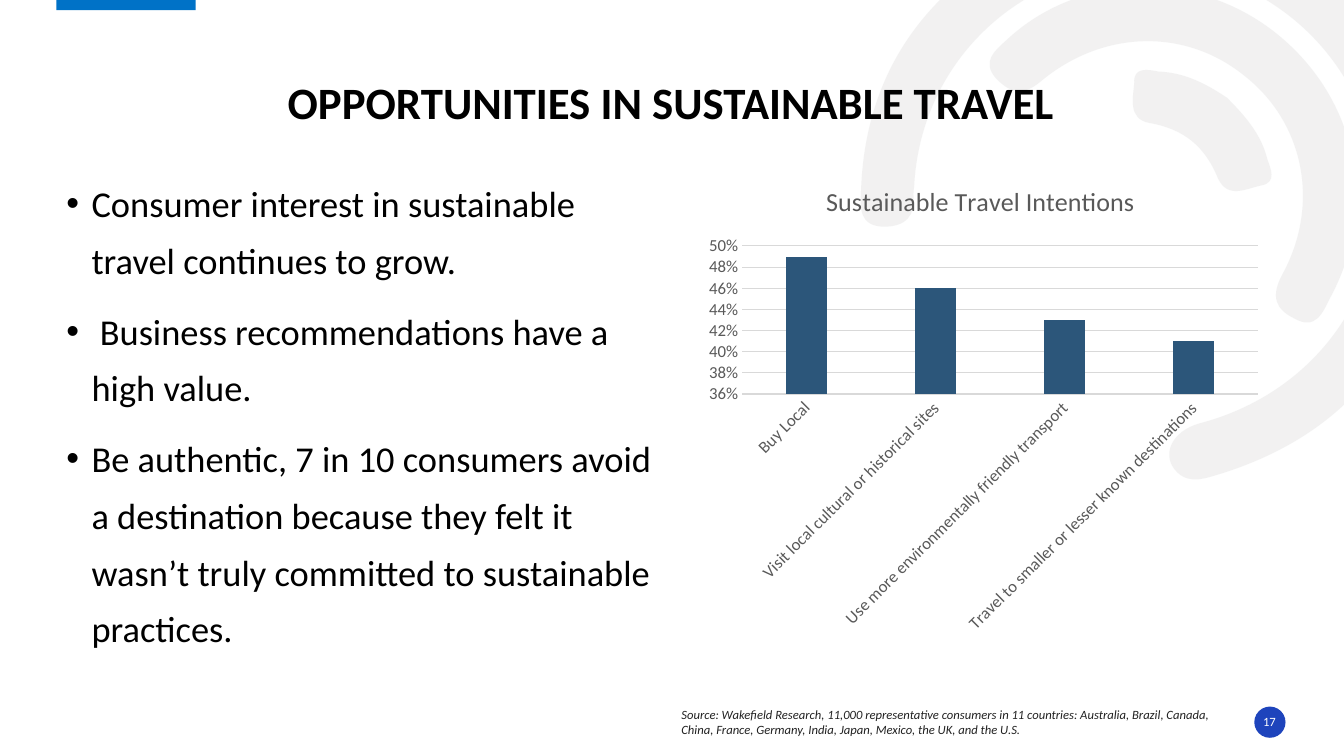
from lxml import etree
from pptx import Presentation, util as u
from pptx.chart.data import CategoryChartData
from pptx.dml.color import RGBColor
from pptx.enum import chart as ch, shapes, text
from pptx.oxml import parse_xml
from pptx.oxml.ns import nsdecls, qn

FONT = "Calibri"


def rgb(code):
    return RGBColor.from_string(code)


def style(font, size, color):
    font.name, font.size = FONT, u.Pt(size)
    font.color.rgb = rgb(color)


deck = Presentation()
deck.slide_width, deck.slide_height = u.Inches(13.33), u.Inches(7.5)
slide = deck.slides.add_slide(deck.slide_layouts[6])
items = slide.shapes

# Background arcs: a start point, then Bezier curves of three points each
arcs = [
    [(13.28, -0.14),
     (13.99, 0.51), (14.36, 1.42), (14.14, 2.53), (13.9, 3.65), (13.19, 4.36), (12.11, 4.7),
     (11.97, 4.74), (11.81, 4.81), (11.68, 4.69), (11.51, 4.53), (11.61, 4.28), (11.9, 4.2),
     (13.16, 3.87), (13.9, 2.68), (13.61, 1.44), (13.35, 0.34), (12.32, -0.41), (11.2, -0.33),
     (10.05, -0.25), (9.15, 0.65), (9.07, 1.8), (9.07, 1.84), (9.06, 1.89), (9.06, 1.93),
     (9.08, 2.14), (8.99, 2.25), (8.76, 2.25), (8.52, 2.24), (8.53, 2.06), (8.54, 1.9),
     (8.57, 0.97), (8.95, 0.22), (9.71, -0.33), (10.75, -1.09), (12.16, -1.04), (13.28, -0.14)],
    [(12.67, 0.34),
     (13.47, 0.99), (13.68, 2.06), (13.19, 2.96), (13.12, 3.1), (13.05, 3.28), (12.84, 3.16),
     (12.65, 3.07), (12.6, 2.94), (12.72, 2.72), (13.1, 2.02), (12.93, 1.21), (12.34, 0.75),
     (11.76, 0.28), (10.94, 0.29), (10.32, 0.81), (10.14, 0.96), (10.02, 0.92), (9.88, 0.78),
     (9.73, 0.61), (9.87, 0.5), (9.98, 0.4), (10.7, -0.28), (11.87, -0.31), (12.67, 0.34)],
    [(12.17, 0.97),
     (12.34, 1.14), (12.51, 1.33), (12.57, 1.58), (12.6, 1.67), (12.67, 1.81), (12.51, 1.84),
     (12.36, 1.87), (12.18, 1.98), (12.08, 1.77), (11.95, 1.45), (11.74, 1.28), (11.4, 1.22),
     (11.18, 1.18), (11.24, 0.96), (11.25, 0.82), (11.24, 0.66), (11.39, 0.69), (11.49, 0.71),
     (11.75, 0.72), (11.96, 0.83), (12.17, 0.97)],
]
for arc in arcs:
    dots = [(u.Inches(x), u.Inches(y)) for x, y in arc]
    pen = items.build_freeform(*dots[0])
    pen.add_line_segments(dots[1:], close=True)
    band = pen.convert_to_shape()
    # Join each three straight segments into one curve
    lines = list(band._element.iter(qn("a:lnTo")))
    for i in range(0, len(lines), 3):
        curve = etree.Element(qn("a:cubicBezTo"))
        lines[i].addprevious(curve)
        for line in lines[i:i + 3]:
            curve.append(line[0])
            line.getparent().remove(line)
    band.shadow.inherit = False
    band.fill.solid()
    band.fill.fore_color.rgb = rgb("E7E6E6")
    tone = band.fill._xPr.find(qn("a:solidFill"))[0]
    etree.SubElement(tone, qn("a:alpha")).set("val", "53000")
    band.line.fill.background()

# Top tab and page badge
for kind, box, color in [
    (shapes.MSO_SHAPE.RECTANGLE, (0.56, -0.02, 1.38, 0.12), "0072C7"),
    (shapes.MSO_SHAPE.OVAL, (12.44, 7.01, 0.31, 0.31), "1E44BC"),
]:
    mark = items.add_shape(kind, *[u.Inches(v) for v in box])
    mark.shadow.inherit = False
    mark.fill.solid()
    mark.fill.fore_color.rgb = rgb(color)
    mark.line.fill.background()

# Texts: box, inset flag, anchor, alignment, size, color, bold, italic, lines
TOP, MID, LOW = text.MSO_ANCHOR.TOP, text.MSO_ANCHOR.MIDDLE, text.MSO_ANCHOR.BOTTOM
LEFT, MIDDLE = text.PP_ALIGN.LEFT, text.PP_ALIGN.CENTER
points = [
    "Consumer interest in sustainable travel continues to grow.",
    " Business recommendations have a high value.",
    "Be authentic, 7 in 10 consumers avoid a destination because they felt it "
    "wasn’t truly committed to sustainable practices.",
]
source = ("Source: Wakefield Research, 11,000 representative consumers in 11 countries: "
          "Australia, Brazil, Canada, China, France, Germany, India, Japan, Mexico, "
          "the UK, and the U.S.")
for box, inset, anchor, align, size, color, bold, slant, lines in [
    ((0.56, 0.27, 12.19, 1.01), False, LOW, MIDDLE, 32, "000000", True, False,
     ["OPPORTUNITIES IN SUSTAINABLE TRAVEL"]),
    ((0.56, 1.62, 6.02, 4.76), True, TOP, LEFT, 26, "000000", False, False, points),
    ((6.66, 6.96, 5.51, 0.4), True, TOP, LEFT, 9, "212121", False, True, [source]),
    ((12.43, 7.06, 0.32, 0.2), False, MID, MIDDLE, 9, "FFFFFF", False, False, ["17"]),
]:
    frame = items.add_textbox(*[u.Inches(v) for v in box]).text_frame
    frame.word_wrap = True
    frame.vertical_anchor = anchor
    if not inset:
        frame.margin_left = frame.margin_right = frame.margin_top = frame.margin_bottom = 0
    for i, line in enumerate(lines):
        para = frame.add_paragraph() if i else frame.paragraphs[0]
        para.alignment = align
        if lines is points:
            para.line_spacing = 1.3
            para.space_before = u.Pt(10 if i else 0)
            props = para._p.get_or_add_pPr()
            props.set("marL", str(u.Inches(0.25)))
            props.set("indent", str(-u.Inches(0.25)))
            props.append(parse_xml(f'<a:buFont {nsdecls("a")} typeface="Arial"/>'))
            props.append(parse_xml(f'<a:buChar {nsdecls("a")} char="•"/>'))
        elif bold:
            para.line_spacing = 0.9
        run = para.add_run()
        run.text = line
        style(run.font, size, color)
        run.font.bold, run.font.italic = bold, slant

# Column chart
data = CategoryChartData(number_format="0%")
data.categories = ["Buy Local", "Visit local cultural or historical sites",
                   "Use more environmentally friendly transport",
                   "Travel to smaller or lesser known destinations"]
data.add_series("Series 1", (0.49, 0.46, 0.43, 0.41))
chart = items.add_chart(ch.XL_CHART_TYPE.COLUMN_CLUSTERED, u.Inches(6.92), u.Inches(1.62),
                        u.Inches(5.67), u.Inches(4.76), data).chart
style(chart.font, 10, "000000")
chart.has_legend = False
chart.has_title = True
run = chart.chart_title.text_frame.paragraphs[0].add_run()
run.text = "Sustainable Travel Intentions "
style(run.font, 18.6, "595959")
run.font.bold = False
chart.chart_title.include_in_layout = False

plot = chart.plots[0]
plot.vary_by_categories = False
plot.gap_width, plot.overlap = 219, -27
bars = plot.series[0].format.fill
bars.solid()
bars.fore_color.rgb = rgb("2C567A")

cats, vals = chart.category_axis, chart.value_axis
for axis in (cats, vals):
    axis.major_tick_mark = axis.minor_tick_mark = ch.XL_TICK_MARK.NONE
    style(axis.tick_labels.font, 12, "595959")
    # Automatic label angle
    axis._element.find(qn("c:txPr")).find(qn("a:bodyPr")).set("rot", "-60000000")
vals.tick_labels.number_format = "0%"
vals.tick_labels.number_format_is_linked = False
vals.format.line.fill.background()
for rule in (cats.format.line, vals.major_gridlines.format.line):
    rule.color.rgb, rule.width = rgb("D9D9D9"), u.Pt(0.75)

deck.save("out.pptx")
